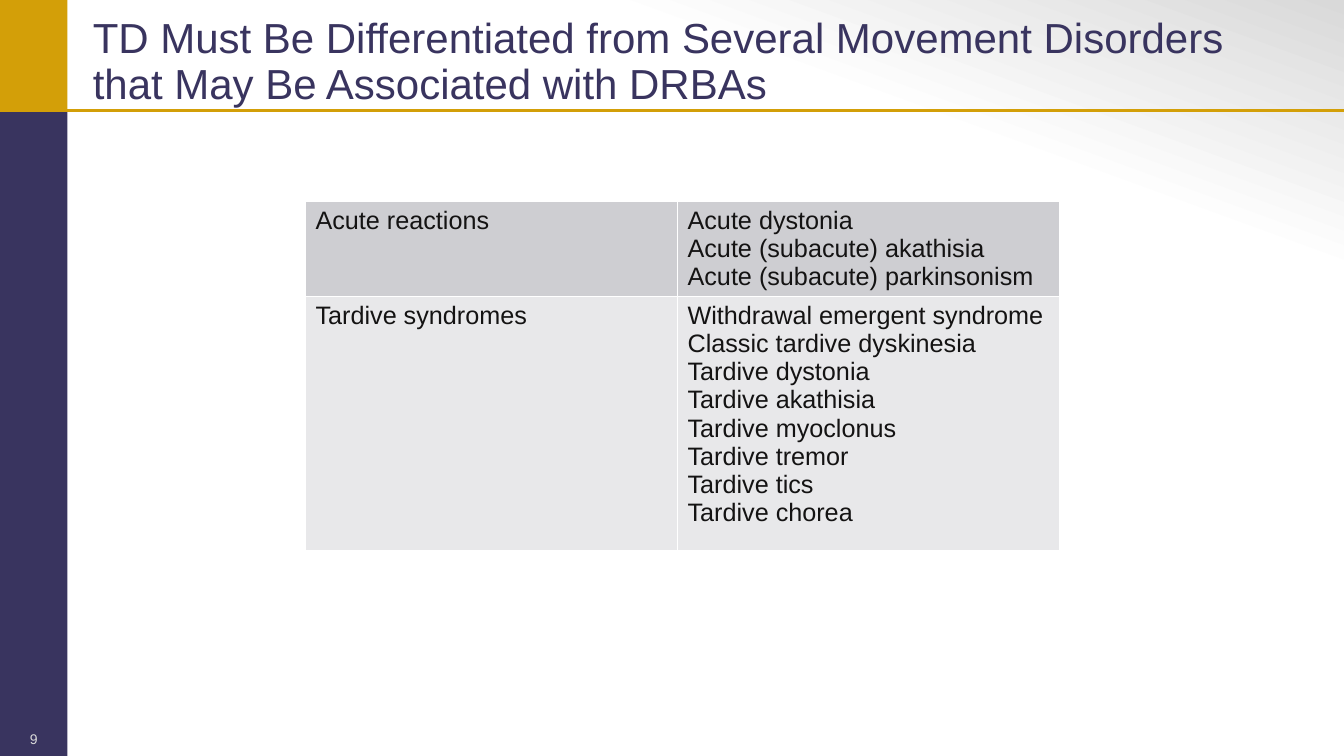
from lxml import etree
from pptx import Presentation
from pptx.dml.color import RGBColor
from pptx.enum import shapes, text
from pptx.oxml import ns
from pptx.util import Inches, Pt

GOLD = RGBColor(0xD3, 0x9F, 0x08)
PURPLE = RGBColor(0x39, 0x34, 0x5F)
INK = RGBColor(0x14, 0x13, 0x13)
WHITE = RGBColor(0xFF, 0xFF, 0xFF)
SILVER = RGBColor(0xD9, 0xD9, 0xD9)
ROW_FILLS = RGBColor(0xCE, 0xCE, 0xD2), RGBColor(0xE8, 0xE8, 0xEA)

W, H = 13.33, 7.5
BAND_W, HEAD_H = 0.67, 1.1

TITLE = ("TD Must Be Differentiated from Several Movement Disorders "
         "that May Be Associated with DRBAs")
DISORDERS = [
    ("Acute reactions",
     ["Acute dystonia", "Acute (subacute) akathisia",
      "Acute (subacute) parkinsonism"]),
    ("Tardive syndromes",
     ["Withdrawal emergent syndrome", "Classic tardive dyskinesia",
      "Tardive dystonia", "Tardive akathisia", "Tardive myoclonus",
      "Tardive tremor", "Tardive tics", "Tardive chorea"]),
]


def set_attrs(obj, **values):
    for name, value in values.items():
        setattr(obj, name, value)


def write(tf, lines, size, color, **para):
    """Fill a text frame with one paragraph per line."""
    for i, line in enumerate(lines):
        p = tf.paragraphs[0] if i == 0 else tf.add_paragraph()
        set_attrs(p, **para)
        r = p.add_run()
        r.text = line
        set_attrs(r.font, name="Arial", size=Pt(size))
        r.font.color.rgb = color


def add_rect(s, x, y, w, h, color=None):
    sp = s.shapes.add_shape(shapes.MSO_SHAPE.RECTANGLE,
                            *map(Inches, (x, y, w, h)))
    sp.shadow.inherit = False
    sp.line.fill.background()
    if color is not None:
        sp.fill.solid()
        sp.fill.fore_color.rgb = color
    return sp


def add_frame(s, x, y, w, h):
    # Backdrop fading to grey at the top right
    fill = add_rect(s, x, y, w, h).fill
    fill.gradient()
    fill.gradient_angle = 70
    for stop, pos, color in zip(fill.gradient_stops, (0.78, 1), (WHITE, SILVER)):
        stop.position = pos
        stop.color.rgb = color

    # Side band and rule under the title
    add_rect(s, x, y, BAND_W, HEAD_H, GOLD)
    add_rect(s, x, y + HEAD_H, BAND_W, h - HEAD_H, PURPLE)
    rule = s.shapes.add_connector(
        shapes.MSO_CONNECTOR.STRAIGHT,
        *map(Inches, (x + w, y + HEAD_H, x, y + HEAD_H)))
    rule.line.color.rgb = GOLD
    rule.line.width = Pt(2)
    etree.SubElement(rule._element.spPr, ns.qn("a:effectLst"))

    # Slide number
    tf = s.shapes.add_textbox(
        *map(Inches, (x, y + h - 0.3, BAND_W, 0.3))).text_frame
    tf.word_wrap = True
    write(tf, ["9"], 10, SILVER, alignment=text.PP_ALIGN.CENTER)


def add_title(s, x, y, w, h):
    sp = s.shapes.title
    set_attrs(sp, left=Inches(x), top=Inches(y),
              width=Inches(w), height=Inches(h))
    tf = sp.text_frame
    set_attrs(tf, margin_left=0, margin_right=0, margin_top=0, margin_bottom=0,
              word_wrap=True, auto_size=text.MSO_AUTO_SIZE.NONE,
              vertical_anchor=text.MSO_ANCHOR.MIDDLE)
    write(tf, [TITLE], 30, PURPLE, line_spacing=0.9,
          alignment=text.PP_ALIGN.LEFT)
    # Bring the title in front of the backdrop
    s.shapes._spTree.append(sp._element)


def set_borders(cell):
    tcPr = cell._tc.get_or_add_tcPr()
    for i, side in enumerate(("lnL", "lnR", "lnT", "lnB")):
        ln = etree.Element(ns.qn("a:" + side), w=str(Pt(1)))
        fill = etree.SubElement(ln, ns.qn("a:solidFill"))
        etree.SubElement(fill, ns.qn("a:srgbClr"), val=str(WHITE))
        tcPr.insert(i, ln)


def add_disorder_table(s, x, y, col_widths, row_heights):
    table = s.shapes.add_table(
        len(row_heights), len(col_widths),
        *map(Inches, (x, y, sum(col_widths), sum(row_heights)))).table
    set_attrs(table, first_row=False, horz_banding=False)
    for col, width in zip(table.columns, col_widths):
        col.width = Inches(width)
    for row, height, color, (group, items) in zip(
            table.rows, row_heights, ROW_FILLS, DISORDERS):
        row.height = Inches(height)
        for cell, lines in zip(row.cells, ([group], items)):
            cell.fill.solid()
            cell.fill.fore_color.rgb = color
            set_borders(cell)
            write(cell.text_frame, lines, 18, INK)


def main():
    prs = Presentation()
    set_attrs(prs, slide_width=Inches(W), slide_height=Inches(H))
    s = prs.slides.add_slide(prs.slide_layouts[5])
    add_frame(s, 0, 0, W, H)
    add_title(s, 0.92, 0.11, 11.74, 1.03)
    add_disorder_table(s, 3.03, 2, (3.69, 3.79), (0.94, 2.52))
    prs.save("out.pptx")


if __name__ == "__main__":
    main()
